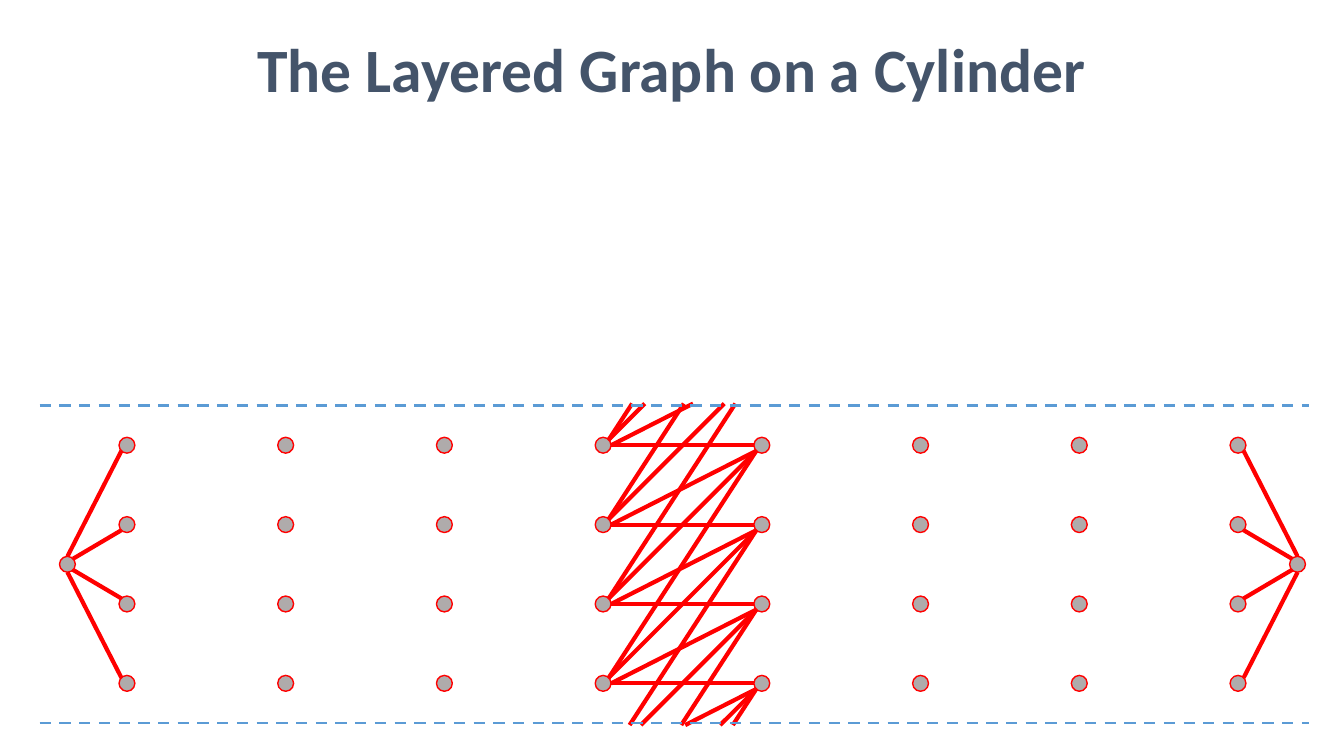
from dataclasses import dataclass
from typing import Optional

from lxml.etree import SubElement
from pptx import Presentation
from pptx.dml.color import RGBColor
from pptx.enum.dml import MSO_LINE
from pptx.enum.shapes import MSO_CONNECTOR, MSO_SHAPE
from pptx.enum.text import MSO_ANCHOR, PP_ALIGN
from pptx.oxml.ns import qn
from pptx.util import Cm, Pt

RED = RGBColor(0xFF, 0x00, 0x00)
GRAY = RGBColor(0xAF, 0xAB, 0xAB)
BLUE = RGBColor(0x5B, 0x9B, 0xD5)
SLATE = RGBColor(0x44, 0x54, 0x6A)

LAYERS = [3.2 + 4 * i for i in range(8)]
ROWS = 4
ROW_TOP, ROW_GAP = 11.22, 2
RADIUS, DIAGONAL = 0.2, 0.14
SOURCE_X, SINK_X, TERMINAL_Y = 1.7, 32.7, 14.22
SEAM_LEFT, SEAM_RIGHT = 1, 33
SEAM_TOP, SEAM_BOTTOM = 10.22, 18.22
OVERHANG = 0.05


@dataclass
class Node:
    x: float
    y: float


@dataclass
class Edge:
    x1: float
    y1: float
    x2: float
    y2: float
    color: RGBColor = RED
    width: float = 3
    dash: Optional[MSO_LINE] = None


def row_y(row: int) -> float:
    return ROW_TOP + ROW_GAP * row


def clip(edge: Edge) -> Optional[Edge]:
    top, bottom = SEAM_TOP - OVERHANG, SEAM_BOTTOM + OVERHANG
    if edge.y2 >= bottom or edge.y1 <= top:
        return None
    slope = (edge.x2 - edge.x1) / (edge.y2 - edge.y1)
    y1, y2 = min(edge.y1, bottom), max(edge.y2, top)
    return Edge(edge.x1 + (y1 - edge.y1) * slope, y1,
                edge.x1 + (y2 - edge.y1) * slope, y2)


def wrapped_edges(left: float, right: float) -> list[Edge]:
    edges = [Edge(left, row_y(row), right, row_y(row)) for row in range(ROWS)]
    for shift in range(1, ROWS):
        dx, dy = (RADIUS, 0) if shift == 1 else (DIAGONAL, DIAGONAL)
        for row in range(ROWS + shift):
            edge = clip(Edge(left + dx, row_y(row) - dy,
                             right - DIAGONAL, row_y(row - shift) + DIAGONAL))
            if edge:
                edges.append(edge)
    return edges


def fan_edges(terminal_x: float, layer_x: float) -> list[Edge]:
    side = 1 if layer_x > terminal_x else -1
    edges = []
    for row in range(ROWS):
        y = row_y(row)
        down = 1 if y > TERMINAL_Y else -1
        dx, dy = (0, RADIUS) if row in (0, ROWS - 1) else (DIAGONAL, DIAGONAL)
        edges.append(Edge(terminal_x + side * dx, TERMINAL_Y + down * dy,
                          layer_x - side * DIAGONAL, y - down * DIAGONAL))
    return edges


def draw_edge(s, edge: Edge) -> None:
    sp = s.shapes.add_connector(MSO_CONNECTOR.STRAIGHT, Cm(edge.x1), Cm(edge.y1),
                                Cm(edge.x2), Cm(edge.y2))
    sp.line.color.rgb = edge.color
    sp.line.width = Pt(edge.width)
    if edge.dash:
        sp.line.dash_style = edge.dash
    SubElement(sp._element.spPr, qn("a:effectLst"))


def draw_node(s, node: Node) -> None:
    sp = s.shapes.add_shape(MSO_SHAPE.OVAL, Cm(node.x - RADIUS), Cm(node.y - RADIUS),
                            Cm(2 * RADIUS), Cm(2 * RADIUS))
    sp.shadow.inherit = False
    sp.fill.solid()
    sp.fill.fore_color.rgb = GRAY
    sp.line.color.rgb = RED
    sp.line.width = Pt(1)


def draw_title(s, text: str, width: int) -> None:
    tf = s.shapes.add_textbox(0, 0, width, Cm(3.68)).text_frame
    tf.word_wrap = True
    tf.vertical_anchor = MSO_ANCHOR.MIDDLE
    p = tf.paragraphs[0]
    p.alignment = PP_ALIGN.CENTER
    p.line_spacing = 0.9
    r = p.add_run()
    r.text = text
    for name, value in {"name": "Calibri", "size": Pt(44), "bold": True}.items():
        setattr(r.font, name, value)
    r.font.color.rgb = SLATE


def main() -> None:
    prs = Presentation()
    prs.slide_width, prs.slide_height = Cm(33.87), Cm(19.05)
    s = prs.slides.add_slide(prs.slide_layouts[6])

    draw_title(s, "The Layered Graph on a Cylinder", prs.slide_width)

    edges = wrapped_edges(LAYERS[3], LAYERS[4])
    edges += fan_edges(SOURCE_X, LAYERS[0]) + fan_edges(SINK_X, LAYERS[-1])
    edges += [Edge(SEAM_LEFT, y, SEAM_RIGHT, y, BLUE, 2, MSO_LINE.DASH)
              for y in (SEAM_TOP, SEAM_BOTTOM)]
    for edge in edges:
        draw_edge(s, edge)

    nodes = [Node(x, row_y(row)) for x in LAYERS for row in range(ROWS)]
    nodes += [Node(x, TERMINAL_Y) for x in (SOURCE_X, SINK_X)]
    for node in nodes:
        draw_node(s, node)

    prs.save("out.pptx")


if __name__ == "__main__":
    main()
